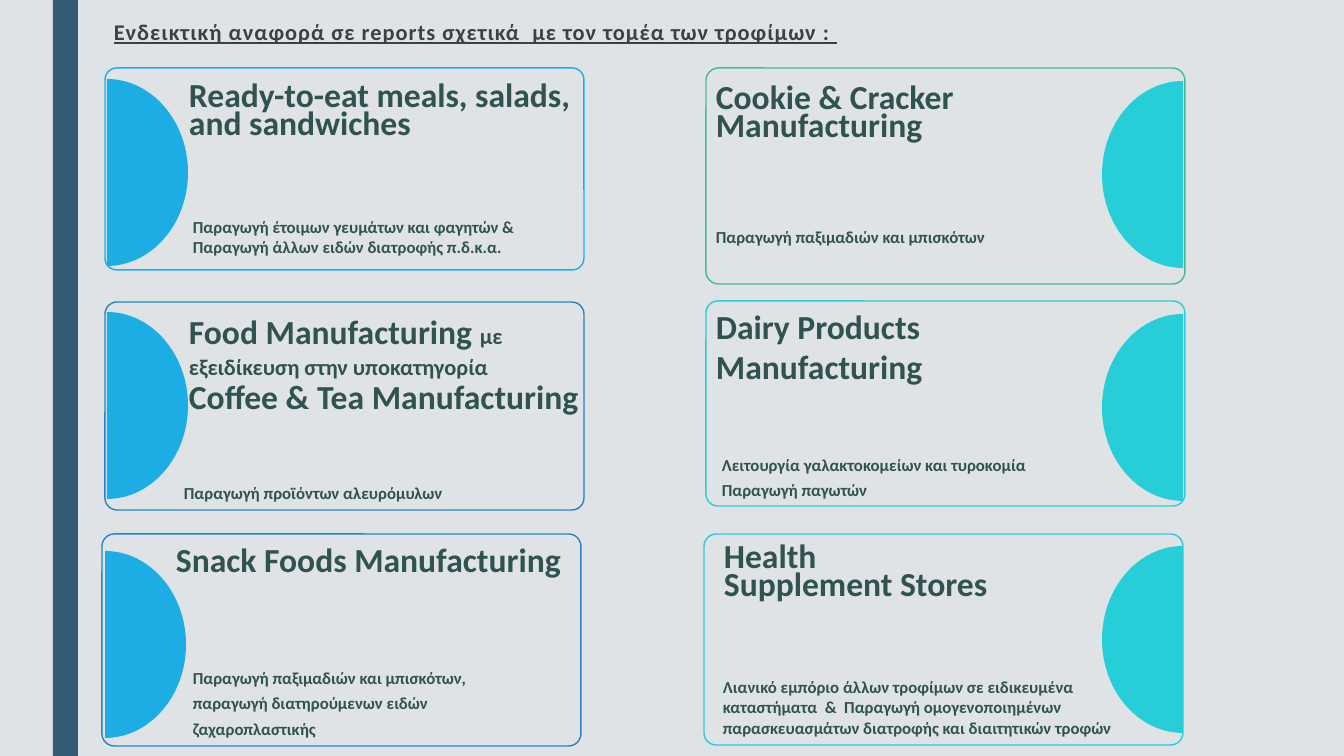
from lxml.etree import SubElement
from pptx import Presentation
from pptx.dml.color import RGBColor
from pptx.enum.shapes import MSO_SHAPE as Preset
from pptx.enum.text import MSO_ANCHOR as Anchor, PP_ALIGN as Align
from pptx.oxml.ns import qn
from pptx.util import Emu, Pt

EMU_PER_PX = 914400 / 100.8
SLIDE_WIDTH, SLIDE_HEIGHT = 1344, 756
FONT = "Calibri"

BACKGROUND = RGBColor(0xDF, 0xE3, 0xE5)
NAVY = RGBColor(0x33, 0x5B, 0x74)
SKY = RGBColor(0x1C, 0xAD, 0xE4)
BLUE = RGBColor(0x26, 0x83, 0xC6)
TURQUOISE = RGBColor(0x27, 0xCE, 0xD7)
GREEN = RGBColor(0x42, 0xBA, 0x97)
DARK_GREEN = RGBColor(0x30, 0x52, 0x50)
GREY = RGBColor(0x40, 0x40, 0x40)

CARD_WIDTH = 479
DISC_WIDTH, DISC_HEIGHT = 81, 187
ROUNDNESS = 0.55
HEADING_SIZE, SUBHEADING_SIZE, DETAIL_SIZE = 24, 16, 12

# left, top, height, outline
CARDS = [
    (105, 68, 202, SKY),
    (105, 302, 208, BLUE),
    (102, 534, 212, BLUE),
    (706, 68, 216, GREEN),
    (706, 301, 205, TURQUOISE),
    (704, 534, 211, TURQUOISE),
]

# x of the flat side, top, direction of the bulge, fill
HALF_DISCS = [
    (107, 79, 1, SKY),
    (107, 312, 1, SKY),
    (105, 551, 1, SKY),
    (1183, 81, -1, TURQUOISE),
    (1183, 314, -1, TURQUOISE),
    (1183, 546, -1, TURQUOISE),
]

# box, anchor, line spacing in points, paragraphs of (text, size) runs
HEADINGS = [
    ((179, 78, 415, 69), Anchor.BOTTOM, 20,
     [[("Ready-to-eat meals, salads, and sandwiches", HEADING_SIZE)]]),
    ((179, 315, 430, 106), Anchor.BOTTOM, 20,
     [[("Food Manufacturing ", HEADING_SIZE),
       ("με εξειδίκευση στην υποκατηγορία", SUBHEADING_SIZE)],
      [("Coffee & Tea Manufacturing", HEADING_SIZE)]]),
    ((166, 544, 415, 40), Anchor.BOTTOM, 20,
     [[("Snack Foods Manufacturing", HEADING_SIZE)]]),
    ((706, 80, 427, 69), Anchor.BOTTOM, 20,
     [[("Cookie & Cracker Manufacturing", HEADING_SIZE)]]),
    ((706, 301, 396, 92), Anchor.TOP, None,
     [[("Dairy Products Manufacturing", HEADING_SIZE)]]),
    ((714, 542, 287, 69), Anchor.TOP, 20,
     [[("Health Supplement Stores", HEADING_SIZE)]]),
]

# box, line spacing in points, paragraphs
DETAILS = [
    ((183, 212, 343, 50), None,
     ["Παραγωγή έτοιμων γευμάτων και φαγητών & Παραγωγή άλλων ειδών διατροφής π.δ.κ.α."]),
    ((174, 473, 319, 33), 18, ["Παραγωγή προϊόντων αλευρόμυλων"]),
    ((183, 658, 309, 85), 18,
     ["Παραγωγή παξιμαδιών και μπισκότων, παραγωγή διατηρούμενων ειδών ζαχαροπλαστικής"]),
    ((706, 217, 352, 33), 18, ["Παραγωγή παξιμαδιών και μπισκότων"]),
    ((712, 445, 369, 59), 18,
     ["Λειτουργία γαλακτοκομείων και τυροκομία", "Παραγωγή παγωτών"]),
    ((713, 672, 430, 72), None,
     ["Λιανικό εμπόριο άλλων τροφίμων σε ειδικευμένα καταστήματα  &  "
      "Παραγωγή ομογενοποιημένων παρασκευασμάτων διατροφής και διαιτητικών τροφών"]),
]


def px(length):
    return Emu(round(length * EMU_PER_PX))


def fill_plain(shape, color):
    shape.shadow.inherit = False
    shape.fill.solid()
    shape.fill.fore_color.rgb = color
    shape.line.fill.background()


def add_side_bar(slide):
    bar = slide.shapes.add_shape(Preset.RECTANGLE, px(53), 0, px(25), px(SLIDE_HEIGHT))
    fill_plain(bar, NAVY)


def add_card(slide, left, top, height, outline):
    card = slide.shapes.add_shape(
        Preset.ROUNDED_RECTANGLE, px(left), px(top), px(CARD_WIDTH), px(height))
    card.adjustments[0] = 0.058
    card.shadow.inherit = False
    card.fill.background()
    card.line.color.rgb = outline
    card.line.width = Pt(1)


def bend(segment, controls):
    """Turn a straight freeform segment into a Bézier curve with two control points."""
    segment.tag = qn("a:cubicBezTo")
    for index, (x, y) in enumerate(controls):
        point = SubElement(segment, qn("a:pt"), x=str(px(x)), y=str(px(y)))
        segment.insert(index, point)


def add_half_disc(slide, flat_x, top, direction, color):
    """Draw half an ellipse that bulges right (1) or left (-1) from its flat side."""
    tip = (px(flat_x + direction * DISC_WIDTH), px(top + DISC_HEIGHT / 2))
    bottom_corner = (px(flat_x), px(top + DISC_HEIGHT))
    top_corner = (px(flat_x), px(top))
    builder = slide.shapes.build_freeform(*tip)
    builder.add_line_segments([bottom_corner, top_corner, tip], close=True)
    half_disc = builder.convert_to_shape()

    local_flat, local_tip = (0, DISC_WIDTH) if direction > 0 else (DISC_WIDTH, 0)
    control_x = local_flat + direction * DISC_WIDTH * ROUNDNESS
    reach = DISC_HEIGHT / 2 * ROUNDNESS
    lower, _, upper = list(half_disc._element.iter(qn("a:lnTo")))
    bend(lower, [(local_tip, DISC_HEIGHT / 2 + reach), (control_x, DISC_HEIGHT)])
    bend(upper, [(control_x, 0), (local_tip, DISC_HEIGHT / 2 - reach)])
    fill_plain(half_disc, color)


def add_text(slide, box, paragraphs, color=DARK_GREEN, anchor=Anchor.TOP,
             line_spacing=None, space_before=0):
    """Add a text box of bold runs and return its text frame."""
    frame = slide.shapes.add_textbox(*map(px, box)).text_frame
    frame.word_wrap = True
    frame.vertical_anchor = anchor
    for index, runs in enumerate(paragraphs):
        paragraph = frame.add_paragraph() if index else frame.paragraphs[0]
        paragraph.space_before = Pt(space_before)
        if line_spacing:
            paragraph.line_spacing = Pt(line_spacing)
        for text, size in runs:
            run = paragraph.add_run()
            run.text = text
            run.font.name = FONT
            run.font.size = Pt(size)
            run.font.bold = True
            run.font.color.rgb = color
    return frame


def add_title(slide):
    title = "Ενδεικτική αναφορά σε reports σχετικά  με τον τομέα των τροφίμων : "
    frame = add_text(slide, (103, 14, 745, 32), [[(title, 16)]], GREY,
                     line_spacing=20, space_before=6)
    frame.margin_left = frame.margin_right = px(5)
    frame.margin_top = frame.margin_bottom = px(3)
    paragraph = frame.paragraphs[0]
    paragraph.alignment = Align.CENTER
    run = paragraph.runs[0]
    run.font.underline = True
    run._r.get_or_add_rPr().set("spc", "75")


def main():
    presentation = Presentation()
    presentation.slide_width = px(SLIDE_WIDTH)
    presentation.slide_height = px(SLIDE_HEIGHT)
    slide = presentation.slides.add_slide(presentation.slide_layouts[6])
    slide.background.fill.solid()
    slide.background.fill.fore_color.rgb = BACKGROUND

    add_side_bar(slide)
    add_title(slide)
    for card in CARDS:
        add_card(slide, *card)
    for half_disc in HALF_DISCS:
        add_half_disc(slide, *half_disc)
    for box, anchor, line_spacing, paragraphs in HEADINGS:
        add_text(slide, box, paragraphs, anchor=anchor, line_spacing=line_spacing,
                 space_before=6 if line_spacing else 0)
    for box, line_spacing, texts in DETAILS:
        add_text(slide, box, [[(text, DETAIL_SIZE)] for text in texts],
                 line_spacing=line_spacing)

    presentation.save("out.pptx")


if __name__ == "__main__":
    main()
